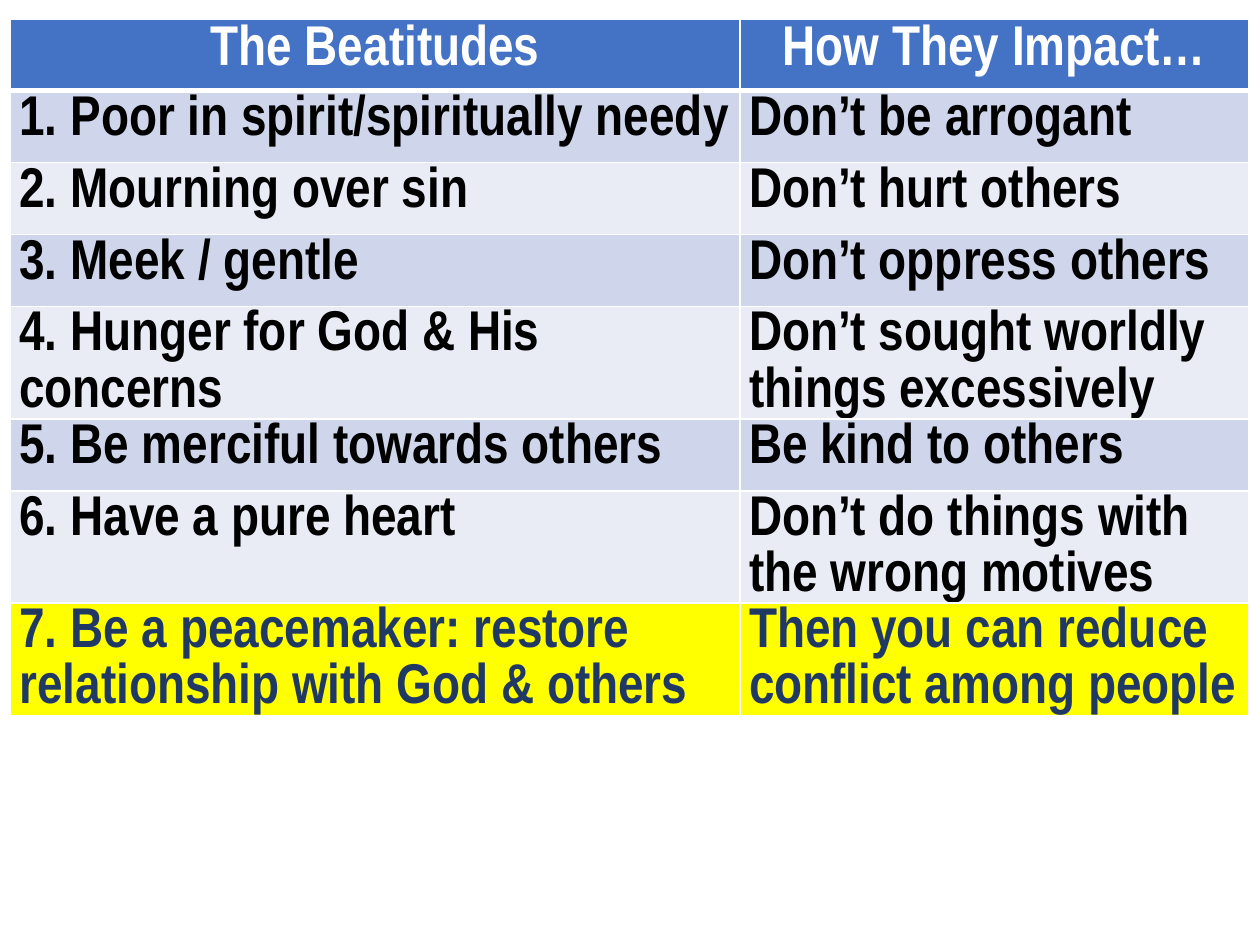
"""Build a slide with a table of the Beatitudes and their impact."""
from lxml.etree import SubElement
from pptx import Presentation
from pptx.dml.color import RGBColor
from pptx.enum.text import PP_ALIGN
from pptx.oxml.ns import qn
from pptx.util import Cm, Pt

HEADINGS = ("The Beatitudes", "How They Impact…")
BEATITUDES = [
    ("1. Poor in spirit/spiritually needy", "Don’t be arrogant"),
    ("2. Mourning over sin", "Don’t hurt others"),
    ("3. Meek / gentle", "Don’t oppress others"),
    ("4. Hunger for God & His concerns", "Don’t sought worldly things excessively"),
    ("5. Be merciful towards others", "Be kind to others"),
    ("6. Have a pure heart", "Don’t do things with the wrong motives"),
    ("7. Be a peacemaker: restore relationship with God & others",
     "Then you can reduce conflict among people"),
]
WHITE = RGBColor(0xFF, 0xFF, 0xFF)
BLACK = RGBColor(0, 0, 0)
BLUE = RGBColor(0x44, 0x72, 0xC4)
NAVY = RGBColor(0x20, 0x38, 0x64)
YELLOW = RGBColor(0xFF, 0xFF, 0)
BANDS = (RGBColor(0xCF, 0xD5, 0xEA), RGBColor(0xE9, 0xEB, 0xF5))
COLUMN_WIDTHS = (Cm(14.71), Cm(10.26))
ROW_HEIGHT = Cm(1.45)


def add_borders(cell, top, bottom):
    """Draw white cell borders with the given top and bottom widths."""
    properties = cell._tc.get_or_add_tcPr()
    for side, width in (("L", 1), ("R", 1), ("T", top), ("B", bottom)):
        line = SubElement(properties, qn(f"a:ln{side}"), w=str(Pt(width)))
        SubElement(SubElement(line, qn("a:solidFill")), qn("a:srgbClr"), val=str(WHITE))


def fill_cell(cell, words, ink, paper):
    """Write one cell's words and colour its background."""
    cell.fill.solid()
    cell.fill.fore_color.rgb = paper
    run = cell.text_frame.paragraphs[0].add_run()
    run.text = words
    run.font.name = "Arial Narrow"
    run.font.size = Pt(32)
    run.font.bold = True
    run.font.color.rgb = ink


def main():
    """Lay out the table and save the slide."""
    deck = Presentation()
    deck.slide_width, deck.slide_height = Cm(25.4), Cm(19.05)
    slide = deck.slides.add_slide(deck.slide_layouts[6])
    rows = [HEADINGS, *BEATITUDES]
    table = slide.shapes.add_table(
        len(rows), len(HEADINGS), Cm(0.21), Cm(0.38),
        sum(COLUMN_WIDTHS), ROW_HEIGHT * len(rows)).table
    for column, width in zip(table.columns, COLUMN_WIDTHS):
        column.width = width

    last = len(BEATITUDES)
    for number, row in enumerate(rows):
        table.rows[number].height = ROW_HEIGHT
        if number == 0:
            ink, paper = WHITE, BLUE
        elif number == last:
            ink, paper = NAVY, YELLOW
        else:
            ink, paper = BLACK, BANDS[(number - 1) % 2]
        for cell, words in zip(table.rows[number].cells, row):
            add_borders(cell, 3 if number == 1 else 1, 3 if number == 0 else 1)
            fill_cell(cell, words, ink, paper)
            paragraph = cell.text_frame.paragraphs[0]
            if number == 0:
                paragraph.alignment = PP_ALIGN.CENTER
            else:
                paragraph.line_spacing = 1.07
                cell.margin_left = cell.margin_right = Cm(0.18)
                cell.margin_top = cell.margin_bottom = 0
    deck.save("out.pptx")


if __name__ == "__main__":
    main()
